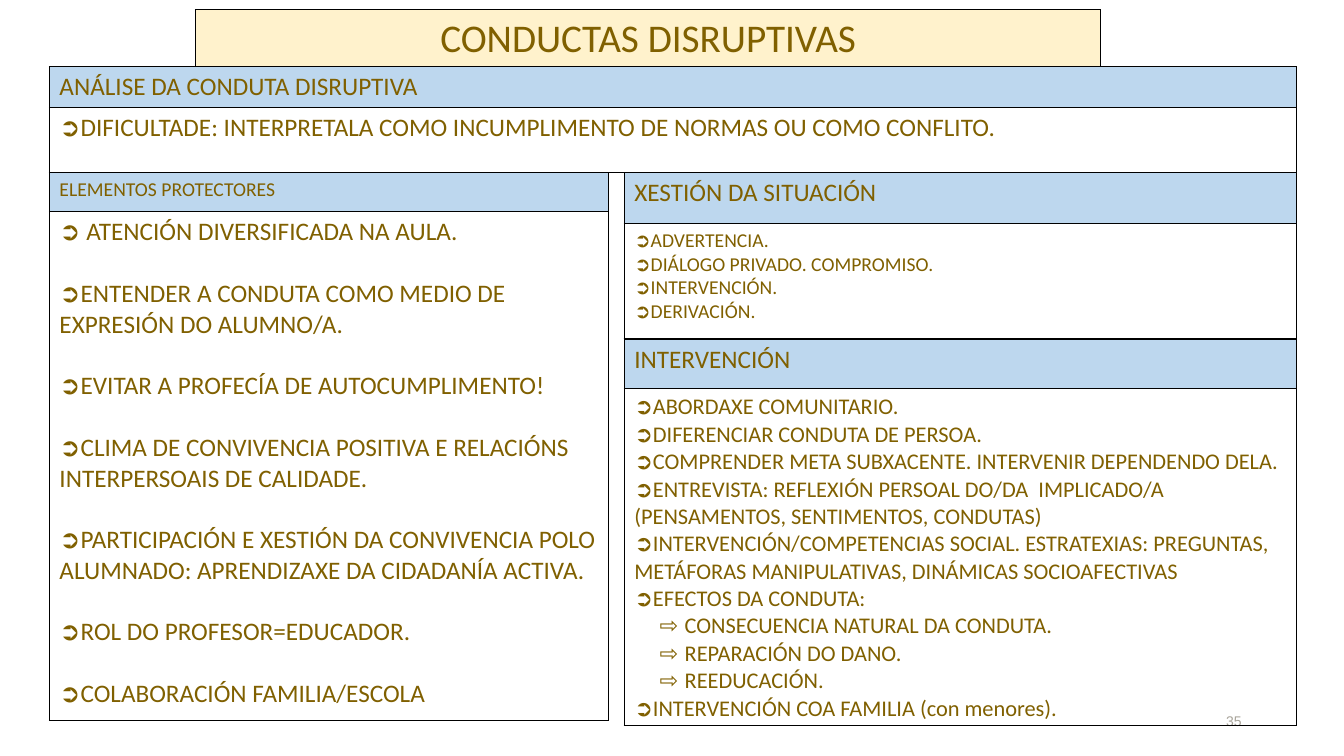
from lxml.etree import SubElement
from pptx import Presentation
from pptx.dml.color import RGBColor
from pptx.enum.text import MSO_ANCHOR, PP_ALIGN
from pptx.oxml import parse_xml
from pptx.oxml.ns import nsdecls, qn
from pptx.util import Pt

OCHRE = RGBColor(0x80, 0x60, 0x00)
CREAM = RGBColor(0xFF, 0xF2, 0xCC)
SKY = RGBColor(0xBD, 0xD7, 0xEE)
STONE = RGBColor(0xA7, 0xA3, 0x99)

ARROW, SUB_ARROW = "➲", "⇨"
LEFT, RIGHT, PANEL_TOP = 35.3, 445.9, 123.3
RIGHT_WIDTH = 480.2

PROTECTORS = [
    " ATENCIÓN DIVERSIFICADA NA AULA.",
    "ENTENDER A CONDUTA COMO MEDIO DE EXPRESIÓN DO ALUMNO/A.",
    "EVITAR A PROFECÍA DE AUTOCUMPLIMENTO!",
    "CLIMA DE CONVIVENCIA POSITIVA E RELACIÓNS INTERPERSOAIS DE CALIDADE.",
    "PARTICIPACIÓN E XESTIÓN DA CONVIVENCIA POLO ALUMNADO: "
    "APRENDIZAXE DA CIDADANÍA ACTIVA.",
    "ROL DO PROFESOR=EDUCADOR.",
    "COLABORACIÓN FAMILIA/ESCOLA",
]
MANAGEMENT = ["ADVERTENCIA.", "DIÁLOGO PRIVADO. COMPROMISO.", "INTERVENCIÓN.", "DERIVACIÓN."]
INTERVENTION = [
    "ABORDAXE COMUNITARIO.",
    "DIFERENCIAR CONDUTA DE PERSOA.",
    "COMPRENDER META SUBXACENTE. INTERVENIR DEPENDENDO DELA.",
    "ENTREVISTA: REFLEXIÓN PERSOAL DO/DA  IMPLICADO/A "
    "(PENSAMENTOS, SENTIMENTOS, CONDUTAS)",
    "INTERVENCIÓN/COMPETENCIAS SOCIAL. ESTRATEXIAS: PREGUNTAS, "
    "METÁFORAS MANIPULATIVAS, DINÁMICAS SOCIOAFECTIVAS",
    "EFECTOS DA CONDUTA:",
    ["CONSECUENCIA NATURAL DA CONDUTA.", "REPARACIÓN DO DANO.", "REEDUCACIÓN."],
    "INTERVENCIÓN COA FAMILIA (con menores).",
]


def write(paragraph, text, size, color=OCHRE, font="Calibri", **layout):
    """Put one formatted run in a paragraph."""
    run = paragraph.add_run()
    run.text = text
    for name, value in {"size": Pt(size), "name": font}.items():
        setattr(run.font, name, value)
    run.font.color.rgb = color
    for name, value in layout.items():
        setattr(paragraph, name, value)


def add_bullet(paragraph, char, margin=0, indent=0):
    """Give a paragraph a bullet character and its indents."""
    properties = paragraph._p.get_or_add_pPr()
    properties.set("marL", str(Pt(margin)))
    properties.set("indent", str(Pt(indent)))
    SubElement(properties, qn("a:buFont")).set("typeface", "Calibri")
    SubElement(properties, qn("a:buChar")).set("char", char)


def style_cell(cell, color=None):
    """Set the fill and a thin black border on every side of a cell."""
    if color is None:
        cell.fill.background()
    else:
        cell.fill.solid()
        cell.fill.fore_color.rgb = color
    for position, side in enumerate("LRTB"):
        cell._tc.get_or_add_tcPr().insert(position, parse_xml(
            f'<a:ln{side} {nsdecls("a")} w="{Pt(1)}"><a:solidFill>'
            f'<a:srgbClr val="000000"/></a:solidFill></a:ln{side}>'))


def add_grid(slide, left, top, width, heights):
    """Add a plain one-column table and return its cells."""
    table = slide.shapes.add_table(
        len(heights), 1, Pt(left), Pt(top), Pt(width), Pt(sum(heights))).table
    for name in ("first_row", "horz_banding"):
        setattr(table, name, False)
    for row, height in zip(table.rows, heights):
        row.height = Pt(height)
    return [row.cells[0] for row in table.rows]


def add_items(frame, items, size, gap):
    """Write bulleted items, with nested lists one level deeper."""
    flat = [(entry, isinstance(item, list)) for item in items
            for entry in (item if isinstance(item, list) else [item])]
    for position, (entry, nested) in enumerate(flat):
        paragraph = frame.add_paragraph() if position else frame.paragraphs[0]
        write(paragraph, entry, size, level=int(nested),
              space_before=Pt(gap if position else 0))
        if nested:
            add_bullet(paragraph, SUB_ARROW, 36, -18)
        else:
            add_bullet(paragraph, ARROW)


def add_panel(slide, box, heading, items, heading_size=18, size=18, gap=0):
    """Add a headed panel with a bulleted body."""
    header, body = add_grid(slide, *box)
    style_cell(header, SKY)
    style_cell(body)
    write(header.text_frame.paragraphs[0], heading, heading_size)
    add_items(body.text_frame, items, size, gap)


def add_title(slide, text):
    """Add the boxed slide title."""
    cell, = add_grid(slide, 139.7, 7, 646.6, [41])
    style_cell(cell, CREAM)
    write(cell.text_frame.paragraphs[0], text, 28, alignment=PP_ALIGN.CENTER)


def add_page_number(slide, number):
    """Add the page number at the lower right."""
    frame = slide.shapes.add_textbox(Pt(678), Pt(500.5), Pt(216), Pt(28.8)).text_frame
    for name, value in {"word_wrap": True, "vertical_anchor": MSO_ANCHOR.MIDDLE}.items():
        setattr(frame, name, value)
    write(frame.paragraphs[0], number, 10, STONE, "Arial", alignment=PP_ALIGN.RIGHT)


def main():
    """Build and save the slide."""
    deck = Presentation()
    deck.slide_width, deck.slide_height = Pt(960), Pt(540)
    slide = deck.slides.add_slide(deck.slide_layouts[6])
    add_page_number(slide, "35")
    add_title(slide, "CONDUCTAS DISRUPTIVAS")
    add_panel(slide, (LEFT, PANEL_TOP, 399.4, [28, 363.6]),
              "ELEMENTOS PROTECTORES", PROTECTORS, heading_size=14, gap=22)
    add_panel(slide, (RIGHT, 242.2, RIGHT_WIDTH, [35.3, 241]),
              "INTERVENCIÓN", INTERVENTION, size=16)
    add_panel(slide, (RIGHT, PANEL_TOP, RIGHT_WIDTH, [36.4, 82.5]),
              "XESTIÓN DA SITUACIÓN", MANAGEMENT, size=14)
    add_panel(slide, (LEFT, 47.7, 890.8, [29, 46.4]), "ANÁLISE DA CONDUTA DISRUPTIVA",
              ["DIFICULTADE: INTERPRETALA COMO INCUMPLIMENTO DE NORMAS OU COMO CONFLITO."])
    deck.save("out.pptx")


if __name__ == "__main__":
    main()
